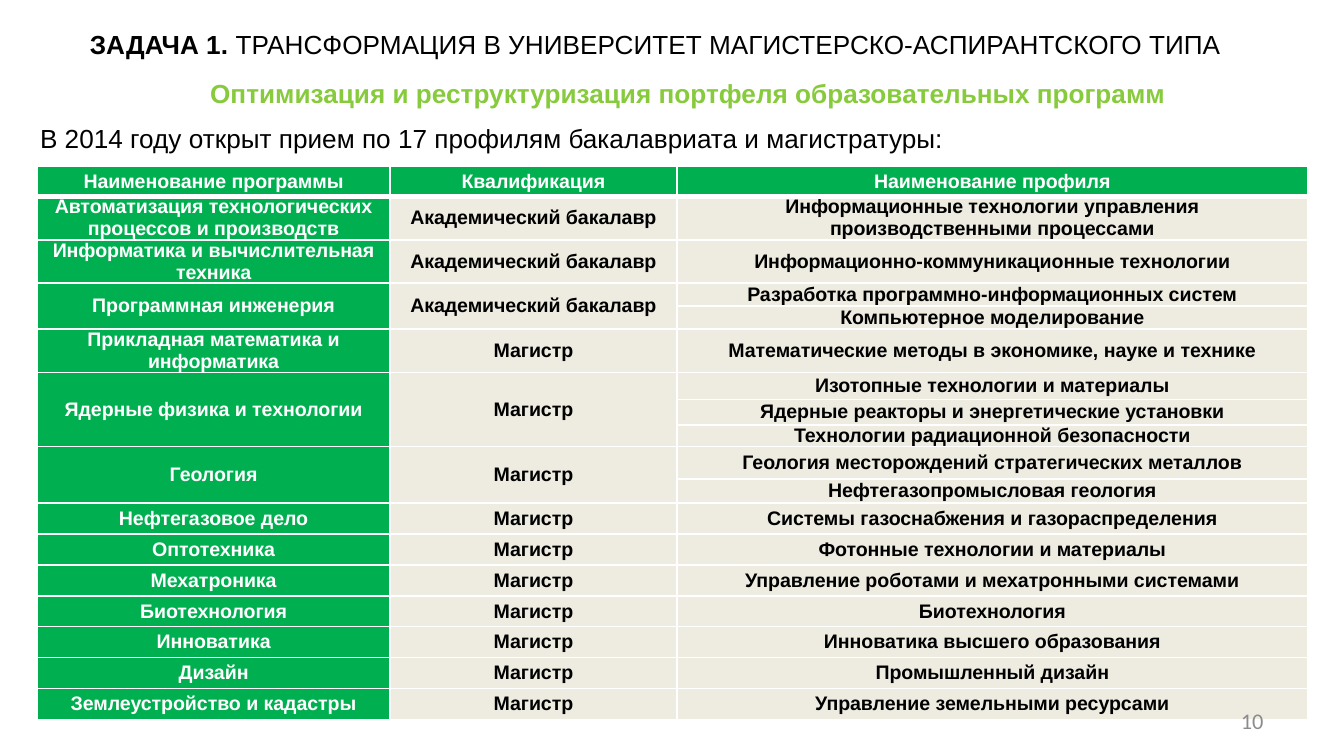
from lxml import etree
from pptx import Presentation
from pptx.dml.color import RGBColor
from pptx.enum.text import MSO_ANCHOR, PP_ALIGN
from pptx.oxml.ns import qn
from pptx.util import Inches, Pt

LEFT, CENTER, RIGHT = PP_ALIGN.LEFT, PP_ALIGN.CENTER, PP_ALIGN.RIGHT
TOP, MIDDLE = MSO_ANCHOR.TOP, MSO_ANCHOR.MIDDLE

# Content
TITLE = [("ЗАДАЧА 1.", True),
         (" ТРАНСФОРМАЦИЯ В УНИВЕРСИТЕТ МАГИСТЕРСКО-АСПИРАНТСКОГО ТИПА", False)]
SUBTITLE = "Оптимизация и реструктуризация портфеля образовательных программ"
INTRO = "В 2014 году открыт прием по 17 профилям бакалавриата и магистратуры:"
PAGE_NUMBER = "10"
HEADERS = ["Наименование программы", "Квалификация", "Наименование профиля"]
BACHELOR, MASTER = "Академический бакалавр", "Магистр"

# Program, degree, profiles as (name, row height)
PROGRAMS = [
    ("Автоматизация технологических процессов и производств", BACHELOR,
     [("Информационные технологии управления производственными процессами", 0.28)]),
    ("Информатика и вычислительная техника", BACHELOR,
     [("Информационно-коммуникационные технологии", 0.27)]),
    ("Программная инженерия", BACHELOR,
     [("Разработка программно-информационных систем", 0.17),
      ("Компьютерное моделирование", 0.17)]),
    ("Прикладная математика и информатика", MASTER,
     [("Математические методы в экономике, науке и технике", 0.27)]),
    ("Ядерные физика и технологии", MASTER,
     [("Изотопные технологии и материалы", 0.2),
      ("Ядерные реакторы и энергетические установки", 0.19),
      ("Технологии радиационной безопасности", 0.15)]),
    ("Геология", MASTER,
     [("Геология месторождений стратегических металлов", 0.24),
      ("Нефтегазопромысловая геология", 0.18)]),
    ("Нефтегазовое дело", MASTER, [("Системы газоснабжения и газораспределения", 0.23)]),
    ("Оптотехника", MASTER, [("Фотонные технологии и материалы", 0.23)]),
    ("Мехатроника", MASTER, [("Управление роботами и мехатронными системами", 0.23)]),
    ("Биотехнология", MASTER, [("Биотехнология", 0.23)]),
    ("Инноватика", MASTER, [("Инноватика высшего образования", 0.23)]),
    ("Дизайн", MASTER, [("Промышленный дизайн", 0.23)]),
    ("Землеустройство и кадастры", MASTER, [("Управление земельными ресурсами", 0.23)]),
]

THEME = {
    "font": "Arial", "number_font": "Calibri",
    "heading": 14, "cell": 10.5, "number": 12,
    "text": "000000", "accent": "87CB3D", "muted": "8C8C8C",
    "green": "00B050", "beige": "EEECE1", "white": "FFFFFF",
}
SLIDE_WIDTH = Inches(10)
SLIDE_HEIGHT = SLIDE_WIDTH * 9 // 16
TABLE_LEFT, TABLE_TOP = 0.28, 1.24
COLUMN_WIDTHS = [2.62, 2.14, 4.69]
HEADER_HEIGHT = 0.22
TIGHT, ROOMY = (0.05, 0), (0.09, 0.03)  # horizontal and vertical cell margins
THIN, THICK = 1, 3


def write_text(frame, text, *, size=THEME["heading"], font=THEME["font"],
               color=THEME["text"], bold=False, align=LEFT):
    """Write a string, or a list of (string, bold) runs, into one paragraph."""
    paragraph = frame.paragraphs[0]
    paragraph.alignment = align
    for part, part_bold in [(text, bold)] if isinstance(text, str) else text:
        run = paragraph.add_run()
        run.text = part
        run.font.size, run.font.name, run.font.bold = Pt(size), font, part_bold
        run.font.color.rgb = RGBColor.from_string(color)


def add_label(slide, box, text, anchor=TOP, **style):
    frame = slide.shapes.add_textbox(*map(Inches, box)).text_frame
    frame.word_wrap = True
    frame.vertical_anchor = anchor
    write_text(frame, text, **style)


def style_cell(cell, fill, margins, top, bottom):
    cell.vertical_anchor = MIDDLE
    cell.margin_left = cell.margin_right = Inches(margins[0])
    cell.margin_top = cell.margin_bottom = Inches(margins[1])
    properties = cell._tc.get_or_add_tcPr()
    for side, width in [("L", THIN), ("R", THIN), ("T", top), ("B", bottom)]:
        line = etree.SubElement(properties, qn(f"a:ln{side}"), w=str(Pt(width)))
        solid = etree.SubElement(line, qn("a:solidFill"))
        etree.SubElement(solid, qn("a:srgbClr"), val=THEME["white"])
    cell.fill.solid()
    cell.fill.fore_color.rgb = RGBColor.from_string(fill)


def add_program_table(slide):
    heights = [HEADER_HEIGHT] + [h for _, _, profiles in PROGRAMS for _, h in profiles]
    table = slide.shapes.add_table(
        len(heights), len(COLUMN_WIDTHS), Inches(TABLE_LEFT), Inches(TABLE_TOP),
        Inches(sum(COLUMN_WIDTHS)), Inches(sum(heights))).table
    for column, width in zip(table.columns, COLUMN_WIDTHS):
        column.width = Inches(width)
    for row, height in zip(table.rows, heights):
        row.height = Inches(height)

    # Fills, margins and borders
    for r in range(len(heights)):
        for c in range(len(COLUMN_WIDTHS)):
            style_cell(table.cell(r, c),
                       THEME["green"] if r == 0 or c == 0 else THEME["beige"],
                       ROOMY if r > 0 and c == 1 else TIGHT,
                       THICK if r == 1 else THIN, THICK if r == 0 else THIN)

    def fill_cell(r, c, text):
        color = THEME["white"] if r == 0 or c == 0 else THEME["text"]
        write_text(table.cell(r, c).text_frame, text, size=THEME["cell"],
                   color=color, bold=True, align=CENTER)

    # Header, then each program spanning its profiles
    for c, header in enumerate(HEADERS):
        fill_cell(0, c, header)
    start = 1
    for program, degree, profiles in PROGRAMS:
        end = start + len(profiles) - 1
        for c, text in enumerate((program, degree)):
            if end > start:
                table.cell(start, c).merge(table.cell(end, c))
            fill_cell(start, c, text)
        for r, (profile, _) in enumerate(profiles, start):
            fill_cell(r, 2, profile)
        start = end + 1


def main():
    presentation = Presentation()
    presentation.slide_width, presentation.slide_height = SLIDE_WIDTH, SLIDE_HEIGHT
    slide = presentation.slides.add_slide(presentation.slide_layouts[6])

    add_program_table(slide)
    add_label(slide, (7.17, 5.21, 2.33, 0.3), PAGE_NUMBER, anchor=MIDDLE, align=RIGHT,
              size=THEME["number"], font=THEME["number_font"], color=THEME["muted"])
    add_label(slide, (0.57, 0.1, 8.92, 0.46), TITLE, anchor=MIDDLE)
    add_label(slide, (0.67, 0.53, 8.9, 0.34), SUBTITLE, color=THEME["accent"],
              bold=True, align=CENTER)
    add_label(slide, (0.2, 0.86, 7.64, 0.34), INTRO)
    presentation.save("out.pptx")


if __name__ == "__main__":
    main()
